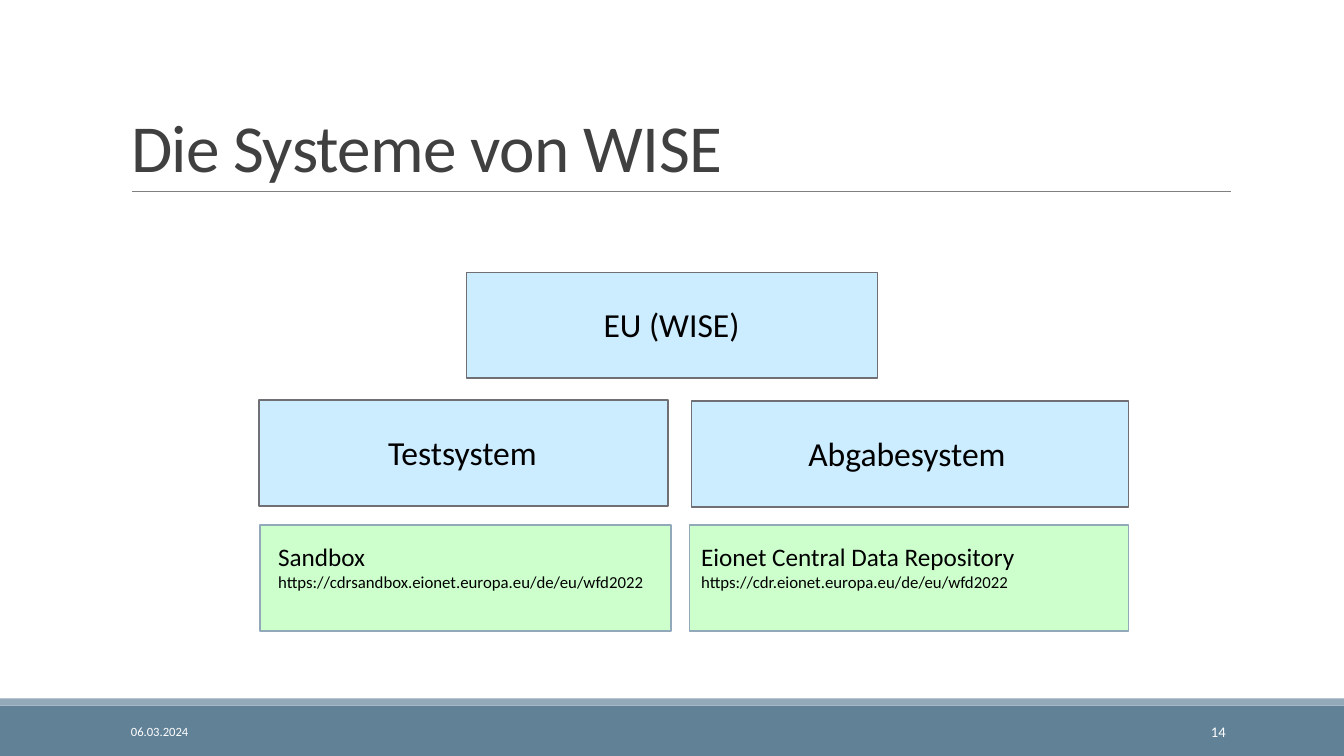
"""Build the slide on the systems of WISE."""
from dataclasses import dataclass

from lxml.etree import SubElement
from pptx import Presentation
from pptx.dml.color import RGBColor as RGB
from pptx.enum.shapes import MSO_CONNECTOR as LINK, MSO_SHAPE as FORM
from pptx.enum.text import MSO_ANCHOR as ANCHOR, MSO_AUTO_SIZE as FIT, PP_ALIGN as ALIGN
from pptx.oxml.ns import qn
from pptx.util import Cm, Pt


@dataclass(frozen=True)
class Theme:
    font: str = "Calibri"
    ink: str = "000000"
    head: str = "404040"
    pale: str = "FFFFFF"
    rule: str = "808080"
    bar: str = "618197"
    strip: str = "92A9B9"
    blue: str = "CCECFF"
    edge: str = "6F6F74"
    green: str = "CCFFCC"
    title: float = 48
    label: float = 24
    name: float = 18
    link: float = 12
    page: float = 10.5
    date: float = 9


def assign(item, values):
    for key, value in values.items():
        setattr(item, key, value)


class Board:
    def __init__(self, deck, theme):
        self.theme = theme
        self.slide = deck.slides.add_slide(deck.slide_layouts[5])
        self.shapes = self.slide.shapes

    def fill_in(self, frame, lines, color, align=ALIGN.LEFT, space=None):
        for index, (text, size) in enumerate(lines):
            para = frame.add_paragraph() if index else frame.paragraphs[0]
            assign(para, {"alignment": align, "line_spacing": space})
            run = para.add_run()
            run.text = text
            assign(run.font, {"name": self.theme.font, "size": Pt(size)})
            run.font.color.rgb = RGB.from_string(color)

    def title(self, text, place):
        head = self.shapes.title
        assign(head, dict(zip(("left", "top", "width", "height"), map(Cm, place))))
        frame = head.text_frame
        assign(frame, {"auto_size": FIT.NONE, "vertical_anchor": ANCHOR.BOTTOM})
        self.fill_in(frame, [(text, self.theme.title)], self.theme.head, space=0.85)
        frame.paragraphs[0].runs[0].font._element.set("spc", "-50")

    def rect(self, place, fill, edge=None):
        box = self.shapes.add_shape(FORM.RECTANGLE, *map(Cm, place))
        box.shadow.inherit = False
        box.fill.solid()
        box.fill.fore_color.rgb = RGB.from_string(fill)
        if edge:
            box.line.color.rgb = RGB.from_string(edge)
            box.line.width = Pt(1)
        else:
            box.line.fill.background()

    def line(self, ends, color):
        rule = self.shapes.add_connector(LINK.STRAIGHT, *map(Cm, ends))
        rule.line.color.rgb = RGB.from_string(color)
        rule.line.width = Pt(0.5)
        SubElement(rule._element.spPr, qn("a:effectLst"))

    def text(self, place, lines, color, align=ALIGN.LEFT, **form):
        frame = self.shapes.add_textbox(*map(Cm, place)).text_frame
        assign(frame, {"word_wrap": True, **form})
        self.fill_in(frame, lines, color, align)


def main():
    deck = Presentation()
    assign(deck, {"slide_width": Cm(33.87), "slide_height": Cm(19.05)})
    theme = Theme()
    board = Board(deck, theme)

    board.rect((0, 17.78, 33.87, 1.27), theme.bar)
    board.rect((0, 17.6, 33.87, 0.18), theme.strip)
    board.line((3.33, 4.83, 31.01, 4.83), theme.rule)
    board.title("Die Systeme von WISE", (3.05, 0.79, 27.94, 4.04))

    tall = 2.67
    systems = [
        ("EU (WISE)", 11.76, 6.86, 10.36, 14.96, 4.11),
        ("Testsystem", 6.53, 10.08, 10.31, 9.53, 4.34),
        ("Abgabesystem", 17.42, 10.11, 11.02, 20.12, 5.64),
    ]
    for name, left, top, width, start, span in systems:
        board.rect((left, top, width, tall), theme.blue, theme.edge)
        board.text((start, top + 0.67, span, 1.27), [(name, theme.label)],
                   theme.ink, auto_size=FIT.SHAPE_TO_FIT_TEXT)

    stores = [
        ("Sandbox", "https://cdrsandbox.eionet.europa.eu/de/eu/wfd2022",
         6.55, 10.36, 6.76, 10.19),
        ("Eionet Central Data Repository", "https://cdr.eionet.europa.eu/de/eu/wfd2022",
         17.37, 11.07, 17.42, 10.26),
    ]
    for name, link, left, width, start, span in stores:
        board.rect((left, 13.23, width, tall), theme.green, theme.strip)
        board.text((start, 13.51, span, 1.55), [(name, theme.name), (link, theme.link)],
                   theme.ink, auto_size=FIT.SHAPE_TO_FIT_TEXT)

    foot = {"vertical_anchor": ANCHOR.MIDDLE}
    board.text((3.05, 17.93, 6.86, 1.02), [("06.03.2024", theme.date)], theme.pale, **foot)
    board.text((27.51, 17.93, 3.63, 1.02), [("14", theme.page)], theme.pale,
               ALIGN.RIGHT, **foot)
    deck.save("out.pptx")


if __name__ == "__main__":
    main()
